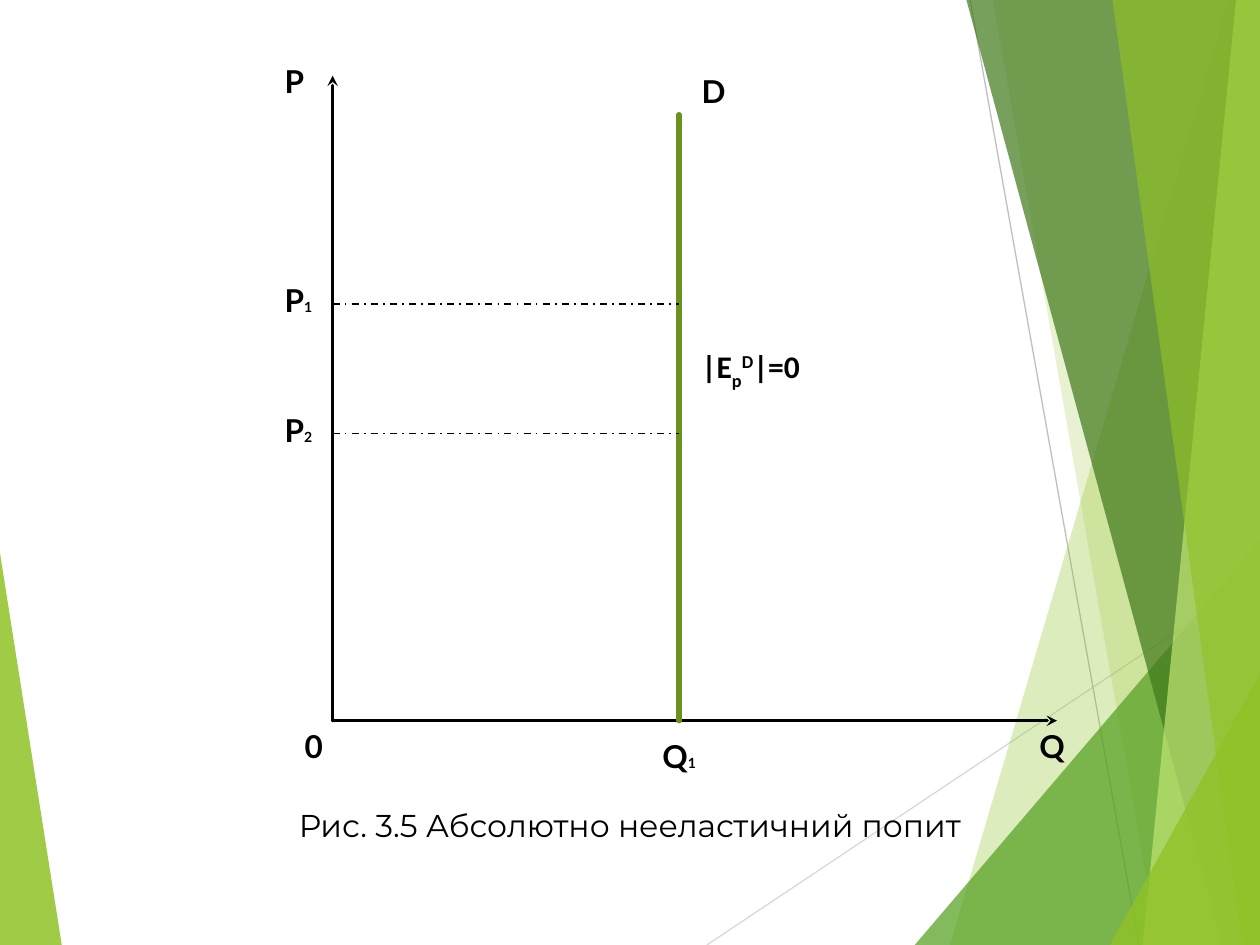
from pptx import Presentation
from pptx.dml.color import RGBColor
from pptx.enum.dml import MSO_LINE
from pptx.enum.shapes import MSO_CONNECTOR
from pptx.enum.text import MSO_ANCHOR, MSO_AUTO_SIZE, PP_ALIGN
from pptx.oxml.ns import qn
from pptx.util import Inches, Pt
from lxml.etree import SubElement

BLACK = "000000"
LIME = "90C226"
DEMAND_GREEN = "6C921D"


def color(hex_value):
    return RGBColor.from_string(hex_value)


def add_line(slide, start, end, hex_value, width, dash=None, arrow=False, rounded=False):
    line = slide.shapes.add_connector(
        MSO_CONNECTOR.STRAIGHT, *(Inches(v) for v in (*start, *end)))
    line.line.color.rgb = color(hex_value)
    line.line.width = Pt(width)
    if dash:
        line.line.dash_style = dash
    properties = line._element.spPr
    outline = properties.find(qn("a:ln"))
    if rounded:
        outline.set("cap", "rnd")
    if arrow:
        SubElement(outline, qn("a:tailEnd"), type="stealth")
    SubElement(properties, qn("a:effectLst"))


def add_facet(slide, points, hex_value, opacity):
    """Borderless, semi-transparent polygon; opacity in percent."""
    start, *others = [(Inches(x), Inches(y)) for x, y in points]
    builder = slide.shapes.build_freeform(*start)
    builder.add_line_segments(others, close=True)
    facet = builder.convert_to_shape()
    facet.shadow.inherit = False
    facet.fill.solid()
    facet.fill.fore_color.rgb = color(hex_value)
    facet.line.fill.background()
    fill_color = facet._element.spPr.find(qn("a:solidFill"))[0]
    SubElement(fill_color, qn("a:alpha"), val=str(opacity * 1000))


def add_text(slide, box, runs, font="Lato", bold=True, align=PP_ALIGN.LEFT,
             wrap=True, anchor=MSO_ANCHOR.TOP):
    """Each run is (text, size, baseline shift in percent)."""
    frame = slide.shapes.add_textbox(*(Inches(v) for v in box)).text_frame
    frame.word_wrap = wrap
    frame.auto_size = MSO_AUTO_SIZE.SHAPE_TO_FIT_TEXT
    frame.vertical_anchor = anchor
    paragraph = frame.paragraphs[0]
    paragraph.alignment = align
    paragraph.font.name = font
    paragraph.font.bold = bold
    paragraph.font.color.rgb = color(BLACK)
    for text, size, shift in runs:
        run = paragraph.add_run()
        run.text = text
        run.font.size = Pt(size)
        if shift:
            run.font._element.set("baseline", str(shift * 1000))


def draw_backdrop(slide, left, top, width, height):
    right, bottom = left + width, top + height

    # Left wedge and the two thin rules
    add_facet(slide, [(left, top + 4.39), (left + 0.49, bottom), (left, bottom)], LIME, 85)
    add_line(slide, (left + 5.61, bottom), (right, top + 4.57), "D9D9D9", 0.75)
    add_line(slide, (left + 7.7, top), (left + 9.04, bottom), "BFBFBF", 0.75)

    # Facets on the right: x at the top edge, x at the bottom edge
    def band(top_x, bottom_x, hex_value, opacity):
        add_facet(slide, [(left + top_x, top), (left + bottom_x, bottom),
                          (right, bottom), (right, top)], hex_value, opacity)

    # Corner triangles: x on the bottom edge, y on the right edge
    def corner(x, y, hex_value, opacity):
        add_facet(slide, [(left + x, bottom), (right, top + y), (right, bottom)],
                  hex_value, opacity)

    band(9.75, 7.54, LIME, 30)
    band(7.88, 9.19, LIME, 20)
    corner(7.26, 4.29, "54A021", 72)
    band(7.67, 9.7, "3F7819", 70)
    band(9.81, 9.07, "C0E474", 70)
    band(8.83, 9.86, LIME, 65)
    corner(8.81, 5.35, LIME, 80)


def draw_demand_graph(slide, left, top, width, height):
    right, bottom = left + width, top + height
    demand_x = left + 2.75
    label_x = left - 0.48

    # Axes
    for tip in ((left, top), (right, bottom)):
        add_line(slide, (left, bottom), tip, BLACK, 2, arrow=True, rounded=True)
    add_text(slide, (label_x, top - 0.16, 0.39, 0.4), [("P", 18, 0)])
    add_text(slide, (right - 0.24, bottom, 0.47, 0.4), [("Q", 18, 0)])
    add_text(slide, (left - 0.32, bottom, 0.39, 0.4), [("0", 18, 0)])

    # Demand line
    add_line(slide, (demand_x, top + 0.31), (demand_x, bottom), DEMAND_GREEN, 3, rounded=True)
    add_text(slide, (demand_x + 0.08, top - 0.08, 0.39, 0.4), [("D", 18, 0)])
    add_text(slide, (demand_x - 0.23, bottom + 0.08, 0.63, 0.4), [("Q", 18, 0), ("1", 8, 0)])

    # Price levels
    for index, offset in (("1", 1.81), ("2", 2.84)):
        price_y = top + offset
        add_line(slide, (left, price_y), (demand_x, price_y), BLACK, 1, MSO_LINE.DASH_DOT)
        add_text(slide, (label_x, price_y - 0.23, 0.55, 0.4), [("P", 18, 0), (index, 8, 0)])

    # Elasticity
    add_text(slide, (demand_x + 0.08, top + 2.13, 1.02, 0.4),
             [("|E", 18, 0), ("p", 18, -30), ("D", 18, 30), ("|=0", 18, 0)],
             font="Calibri", wrap=False, anchor=MSO_ANCHOR.MIDDLE)


def draw_caption(slide, left, top, width, height):
    add_text(slide, (left, top, width, height),
             [("Рис. 3.5 Абсолютно нееластичний попит", 18, 0)],
             font="Montserrat", bold=False, align=PP_ALIGN.CENTER)


def main():
    deck = Presentation()
    deck.slide_width, deck.slide_height = Inches(10), Inches(7.5)
    slide = deck.slides.add_slide(deck.slide_layouts[6])
    draw_backdrop(slide, 0, 0, 10, 7.5)
    draw_demand_graph(slide, 2.64, 0.6, 5.75, 5.12)
    draw_caption(slide, 0.51, 6.35, 8.98, 0.4)
    deck.save("out.pptx")


if __name__ == "__main__":
    main()
